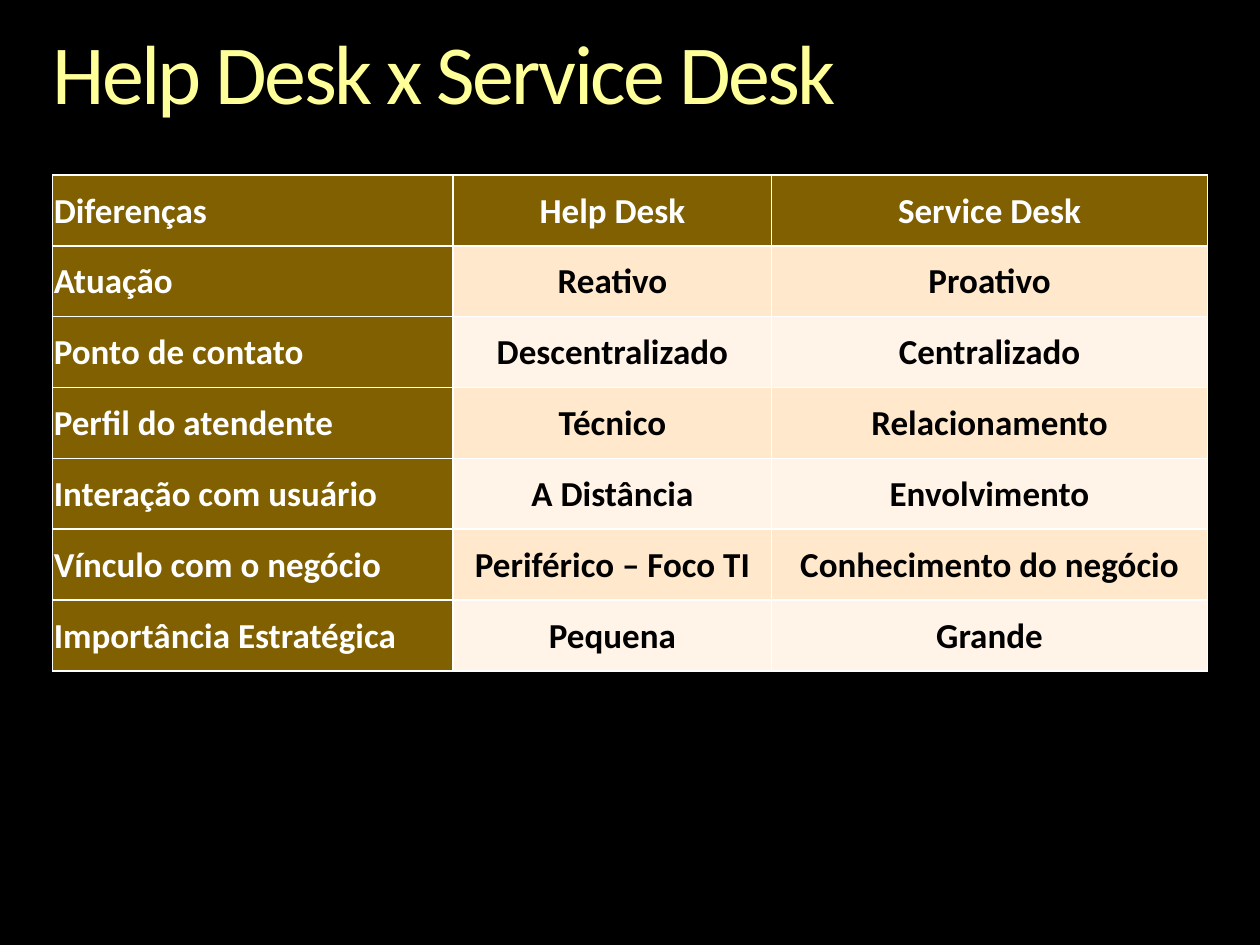
from lxml.etree import SubElement
from pptx import Presentation
from pptx.dml.color import RGBColor
from pptx.enum.text import MSO_ANCHOR, PP_ALIGN
from pptx.oxml.ns import qn
from pptx.util import Pt

COLORS = {
    "background": "000000",
    "title": "FFFF99",
    "header": "806000",
    "odd": "FFE8CC",
    "even": "FFF4E7",
    "light": "FFFFFF",
    "dark": "000000",
}
FONT = "Calibri"
COLUMN_WIDTHS = [229, 182, 249]
ROW_HEIGHT = 40.5
ROWS = [
    ["Diferenças", "Help Desk", "Service Desk"],
    ["Atuação", "Reativo", "Proativo"],
    ["Ponto de contato", "Descentralizado", "Centralizado"],
    ["Perfil do atendente", "Técnico", "Relacionamento"],
    ["Interação com usuário", "A Distância", "Envolvimento"],
    ["Vínculo com o negócio", "Periférico – Foco TI", "Conhecimento do negócio"],
    ["Importância Estratégica", "Pequena", "Grande"],
]


def color(name):
    return RGBColor.from_string(COLORS[name])


def format_run(r, size, color_name, bold=False):
    r.font.name = FONT
    r.font.size = Pt(size)
    r.font.bold = bold
    r.font.color.rgb = color(color_name)


def add_title(s, text):
    sp = s.shapes.add_textbox(Pt(30), Pt(18), Pt(660), Pt(52.5))
    tf = sp.text_frame
    tf.word_wrap = True
    tf.margin_left = tf.margin_top = tf.margin_right = tf.margin_bottom = 0
    tf.text = text
    p = tf.paragraphs[0]
    p.line_spacing = 0.9
    r = p.runs[0]
    format_run(r, 48, "title")
    r.font._element.set("spc", "-150")


def add_borders(cell):
    tc_pr = cell._tc.get_or_add_tcPr()
    for side in ("lnL", "lnR", "lnT", "lnB"):
        ln = SubElement(tc_pr, qn(f"a:{side}"), w=str(Pt(1)))
        fill = SubElement(ln, qn("a:solidFill"))
        SubElement(fill, qn("a:srgbClr"), val=COLORS["light"])


def format_cell(cell, text, row, col):
    is_header = row == 0 or col == 0
    add_borders(cell)
    cell.fill.solid()
    band = "odd" if row % 2 else "even"
    cell.fill.fore_color.rgb = color("header" if is_header else band)
    cell.vertical_anchor = MSO_ANCHOR.MIDDLE
    cell.margin_left = cell.margin_top = cell.margin_right = Pt(0.75)
    cell.margin_bottom = 0
    cell.text_frame.text = text
    p = cell.text_frame.paragraphs[0]
    p.alignment = PP_ALIGN.CENTER if col else PP_ALIGN.JUSTIFY
    format_run(p.runs[0], 20, "light" if is_header else "dark", bold=True)


def add_comparison_table(s):
    table = s.shapes.add_table(
        len(ROWS), len(COLUMN_WIDTHS), Pt(30), Pt(100),
        Pt(sum(COLUMN_WIDTHS)), Pt(ROW_HEIGHT * len(ROWS)),
    ).table
    for column, width in zip(table.columns, COLUMN_WIDTHS):
        column.width = Pt(width)
    for row, texts in enumerate(ROWS):
        table.rows[row].height = Pt(ROW_HEIGHT)
        for col, text in enumerate(texts):
            format_cell(table.cell(row, col), text, row, col)


def main():
    prs = Presentation()
    prs.slide_width, prs.slide_height = Pt(720), Pt(540)
    s = prs.slides.add_slide(prs.slide_layouts[6])
    s.background.fill.solid()
    s.background.fill.fore_color.rgb = color("background")
    add_title(s, "Help Desk x Service Desk")
    add_comparison_table(s)
    prs.save("out.pptx")


if __name__ == "__main__":
    main()
